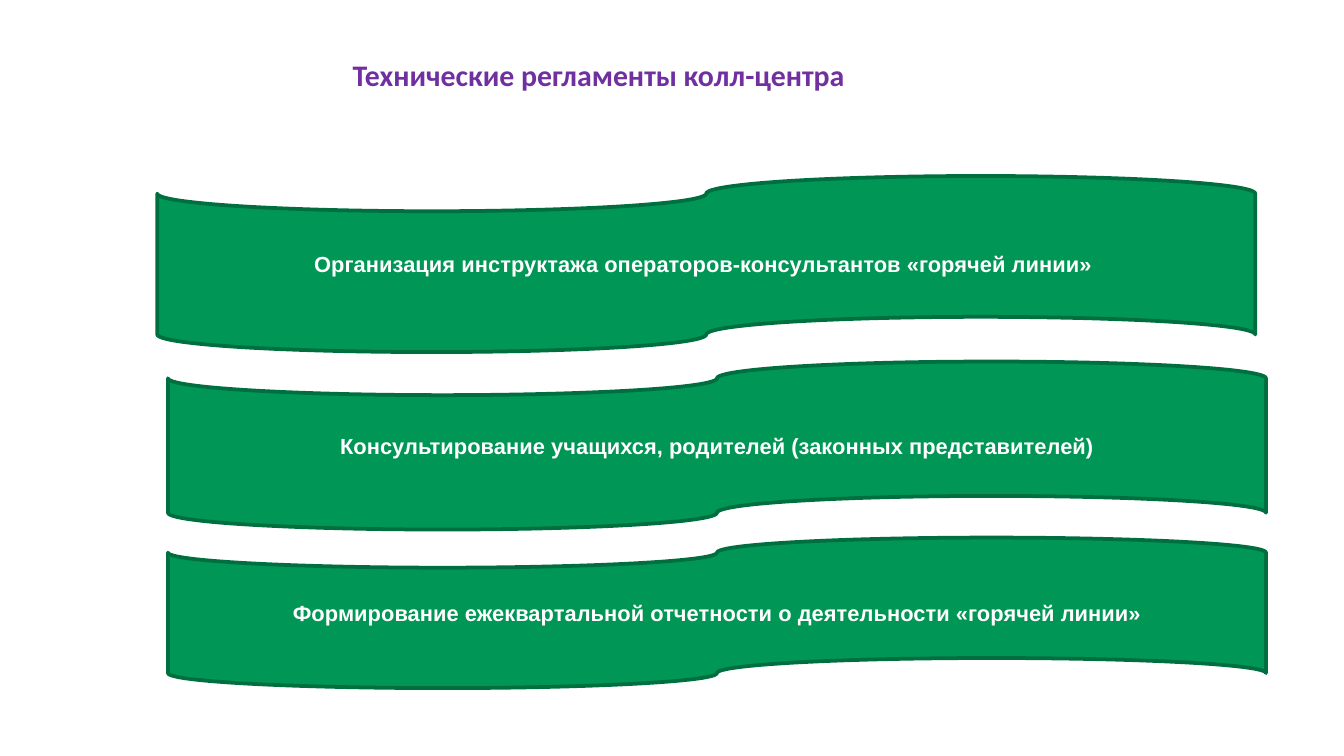
from pptx import Presentation
from pptx.dml.color import RGBColor
from pptx.enum.shapes import MSO_SHAPE
from pptx.enum.text import MSO_ANCHOR, PP_ALIGN
from pptx.util import Inches, Pt

TAPE = MSO_SHAPE.FLOWCHART_PUNCHED_TAPE
TOP, MIDDLE = MSO_ANCHOR.TOP, MSO_ANCHOR.MIDDLE
CENTER = PP_ALIGN.CENTER

PURPLE = RGBColor(0x70, 0x30, 0xA0)
GREEN = RGBColor(0x00, 0x96, 0x55)
DARK_GREEN = RGBColor(0x00, 0x6F, 0x3F)
WHITE = RGBColor(0xFF, 0xFF, 0xFF)

TITLE = "Технические регламенты колл-центра"
BANNER_WIDTH = 8.17
# text, left, top, height
BANNERS = [
    ("Организация инструктажа операторов-консультантов «горячей линии» ", 1.17, 1.31, 1.31),
    ("Консультирование учащихся, родителей (законных представителей)", 1.25, 2.69, 1.25),
    ("Формирование ежеквартальной отчетности о деятельности «горячей линии»", 1.25, 4, 1.12),
]


def write(sp, text, font, size, color, anchor):
    tf = sp.text_frame
    tf.word_wrap = True
    tf.vertical_anchor = anchor
    p = tf.paragraphs[0]
    p.alignment = CENTER
    r = p.add_run()
    r.text = text
    r.font.name = font
    r.font.size = Pt(size)
    r.font.bold = True
    r.font.color.rgb = color


prs = Presentation()
prs.slide_width = Inches(10)
prs.slide_height = prs.slide_width * 9 // 16
s = prs.slides.add_slide(prs.slide_layouts[5])

title = s.shapes.title
title.left, title.top = Inches(0.69), Inches(0.42)
title.width, title.height = Inches(7.53), Inches(0.75)
tf = title.text_frame
tf.margin_left = tf.margin_top = tf.margin_right = tf.margin_bottom = 0
write(title, TITLE, "Calibri", 16, PURPLE, TOP)

for text, left, top, height in BANNERS:
    sp = s.shapes.add_shape(TAPE, Inches(left), Inches(top),
                            Inches(BANNER_WIDTH), Inches(height))
    sp.shadow.inherit = False
    sp.fill.solid()
    sp.fill.fore_color.rgb = GREEN
    sp.line.color.rgb = DARK_GREEN
    sp.line.width = Pt(2)
    write(sp, text, "Arial", 11.7, WHITE, MIDDLE)

prs.save("out.pptx")
